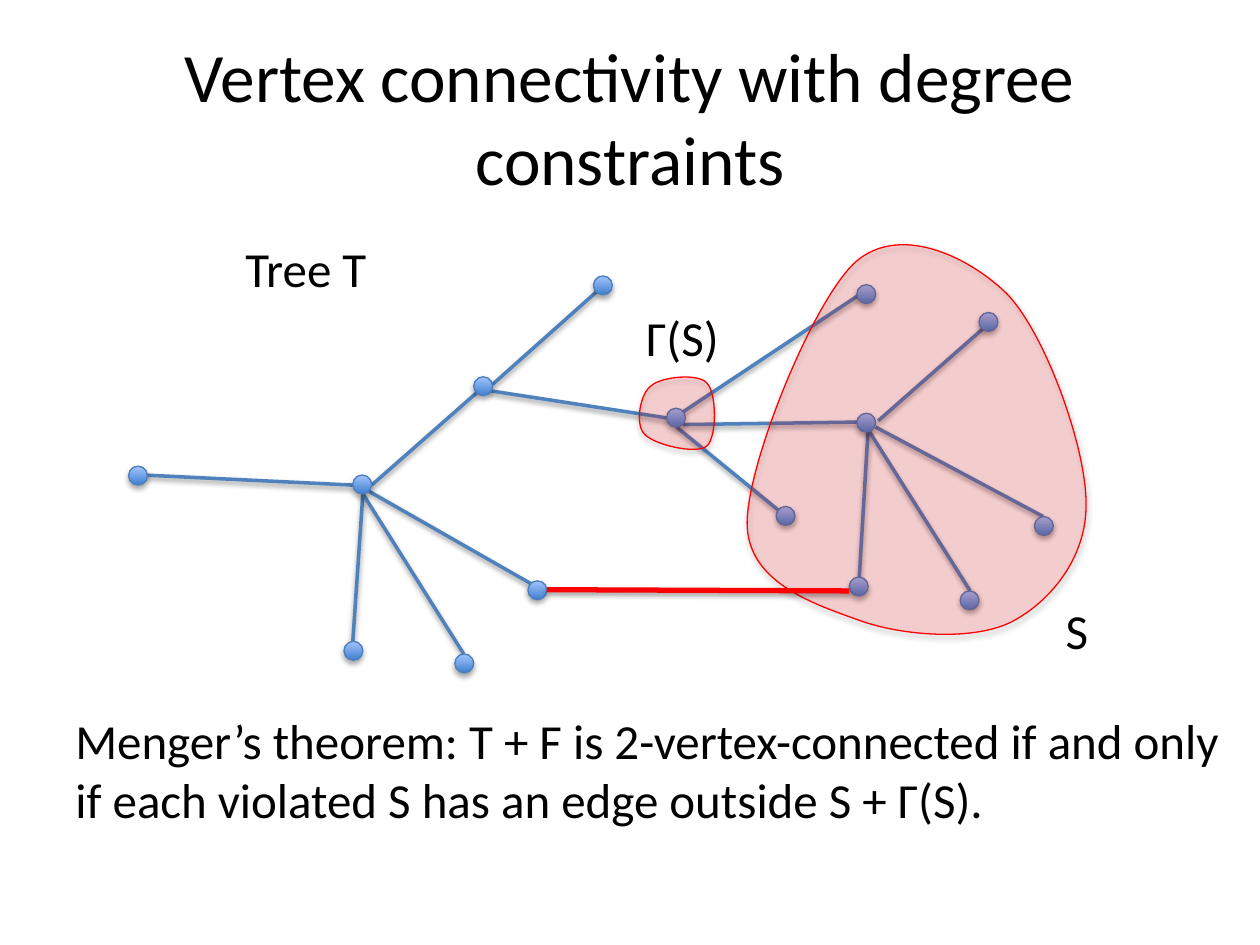
from dataclasses import dataclass

from lxml.etree import SubElement
from pptx import Presentation
from pptx.dml.color import RGBColor
from pptx.enum.shapes import MSO_CONNECTOR, MSO_SHAPE
from pptx.enum.text import MSO_ANCHOR, MSO_AUTO_SIZE, PP_ALIGN
from pptx.oxml.ns import qn
from pptx.util import Inches, Pt


@dataclass(frozen=True)
class Theme:
    font: str = "Calibri"
    title_size: float = 39.6
    body_size: float = 28
    text: RGBColor = RGBColor(0, 0, 0)
    edge: RGBColor = RGBColor(0x4F, 0x81, 0xBD)
    vertex_line: RGBColor = RGBColor(0x4B, 0x7E, 0xBC)
    vertex_dark: RGBColor = RGBColor(0x3F, 0x80, 0xCE)
    vertex_light: RGBColor = RGBColor(0xA4, 0xC4, 0xFF)
    accent: RGBColor = RGBColor(0xFF, 0, 0)


THEME = Theme()
VERTEX_SIZE = 0.15

# Left and top of each vertex
VERTICES = [
    (1.02, 3.7), (2.8, 3.77), (3.61, 5.19), (4.19, 4.61), (2.73, 5.09),
    (3.76, 2.99), (4.71, 2.19), (5.29, 3.24), (6.16, 4.02), (6.8, 2.26),
    (6.8, 3.28), (7.62, 4.69), (8.21, 4.1), (6.74, 4.58), (7.77, 2.48),
]

# Start and end of each tree edge
TREE_EDGES = [
    ((2.8, 3.85), (1.13, 3.77)), ((2.88, 3.92), (2.8, 5.09)),
    ((2.88, 3.92), (3.68, 5.19)), ((2.93, 3.9), (4.21, 4.63)),
    ((3.78, 3.12), (2.95, 3.85)), ((4.73, 2.32), (3.91, 3.05)),
    ((3.88, 3.1), (5.31, 3.32)), ((6.24, 4.1), (5.37, 3.39)),
    ((5.42, 3.27), (6.82, 2.34)), ((5.42, 3.37), (6.8, 3.35)),
    ((6.89, 3.41), (6.82, 4.58)), ((6.89, 3.41), (7.7, 4.69)),
    ((6.95, 3.39), (8.28, 4.1)), ((7.8, 2.61), (6.97, 3.34)),
]
F_EDGE = ((6.74, 4.69), (4.34, 4.68))

# Region outlines: a start point, then two controls and an end per curve
SET_S = [
    (6.79, 2.08),
    (6.45, 2.39), (5.93, 3.68), (5.93, 4.15),
    (5.93, 4.62), (6.45, 4.79), (6.81, 4.92),
    (7.16, 5.05), (7.74, 5.09), (8.04, 4.93),
    (8.34, 4.77), (8.63, 4.42), (8.62, 3.99),
    (8.62, 3.55), (8.3, 2.65), (7.99, 2.33),
    (7.67, 2.02), (7.13, 1.78), (6.79, 2.08),
]
NEIGHBOURS_OF_S = [
    (5.17, 3.06),
    (5.25, 2.99), (5.54, 2.96), (5.61, 3.04),
    (5.69, 3.12), (5.69, 3.47), (5.61, 3.54),
    (5.53, 3.61), (5.18, 3.53), (5.11, 3.44),
    (5.04, 3.36), (5.08, 3.12), (5.17, 3.06),
]


def add_shadow(part, opacity, distance):
    """Give a shape or connector a soft shadow that falls straight down."""
    effects = SubElement(part._element.spPr, qn("a:effectLst"))
    shadow = SubElement(effects, qn("a:outerShdw"), blurRad=str(Pt(3.1)),
                        dist=str(Pt(distance)), dir="5400000", rotWithShape="0")
    black = SubElement(shadow, qn("a:srgbClr"), val="000000")
    SubElement(black, qn("a:alpha"), val=str(opacity * 1000))


def add_edge(slide, ends, color, width):
    (x1, y1), (x2, y2) = ends
    edge = slide.shapes.add_connector(
        MSO_CONNECTOR.STRAIGHT, Inches(x1), Inches(y1), Inches(x2), Inches(y2))
    edge.line.color.rgb = color
    edge.line.width = Pt(width)
    add_shadow(edge, 38, 1.6)


def add_vertex(slide, left, top):
    size = Inches(VERTEX_SIZE)
    vertex = slide.shapes.add_shape(
        MSO_SHAPE.OVAL, Inches(left), Inches(top), size, size)
    vertex.fill.gradient()
    vertex.fill.gradient_angle = 90
    dark, light = vertex.fill.gradient_stops
    dark.position, light.position = 0, 1
    dark.color.rgb, light.color.rgb = THEME.vertex_dark, THEME.vertex_light
    vertex.line.color.rgb = THEME.vertex_line
    vertex.line.width = Pt(0.75)
    add_shadow(vertex, 35, 1.8)


def bend_outline(region):
    """Turn each run of three straight segments into one cubic curve."""
    segments = list(region._element.iter(qn("a:lnTo")))
    outline = segments[0].getparent()
    close = outline.find(qn("a:close"))
    for first in range(0, len(segments), 3):
        curve = SubElement(outline, qn("a:cubicBezTo"))
        for segment in segments[first:first + 3]:
            curve.append(segment[0])
            outline.remove(segment)
    outline.append(close)


def add_region(slide, outline):
    start, *controls = [(Inches(x), Inches(y)) for x, y in outline]
    builder = slide.shapes.build_freeform(*start)
    builder.add_line_segments(controls, close=True)
    region = builder.convert_to_shape()
    bend_outline(region)
    region.fill.solid()
    region.fill.fore_color.rgb = THEME.accent
    fill_color = region._element.spPr.find(qn("a:solidFill")).find(qn("a:srgbClr"))
    SubElement(fill_color, qn("a:alpha"), val="15000")
    region.line.color.rgb = THEME.accent
    region.line.width = Pt(0.75)
    add_shadow(region, 35, 1.8)


def add_text(slide, text, box, size=THEME.body_size, wrap=False,
             align=PP_ALIGN.LEFT, anchor=MSO_ANCHOR.TOP,
             auto_size=MSO_AUTO_SIZE.SHAPE_TO_FIT_TEXT):
    frame = slide.shapes.add_textbox(*map(Inches, box)).text_frame
    frame.word_wrap = wrap
    frame.auto_size = auto_size
    frame.vertical_anchor = anchor
    paragraph = frame.paragraphs[0]
    paragraph.alignment = align
    run = paragraph.add_run()
    run.text = text
    run.font.name = THEME.font
    run.font.size = Pt(size)
    run.font.color.rgb = THEME.text


def main():
    deck = Presentation()
    deck.slide_width, deck.slide_height = Inches(10), Inches(7.5)
    slide = deck.slides.add_slide(deck.slide_layouts[6])

    # Title
    add_text(slide, "Vertex connectivity with degree constraints",
             (0.5, 0.3, 9, 1.25), THEME.title_size, wrap=True,
             align=PP_ALIGN.CENTER, anchor=MSO_ANCHOR.MIDDLE,
             auto_size=MSO_AUTO_SIZE.NONE)

    # Tree T
    for ends in TREE_EDGES:
        add_edge(slide, ends, THEME.edge, 2)
    for left, top in VERTICES:
        add_vertex(slide, left, top)

    # Set S, its neighbours and the edge that leaves both
    add_region(slide, SET_S)
    add_region(slide, NEIGHBOURS_OF_S)
    add_edge(slide, F_EDGE, THEME.accent, 3)

    # Labels
    add_text(slide, "Tree T", (1.85, 1.84, 1.17, 0.57))
    add_text(slide, "Γ(S)", (5.03, 2.39, 0.78, 0.57))
    add_text(slide, "S", (8.36, 4.72, 0.38, 0.57))

    # Theorem
    add_text(slide, "Menger’s theorem: T + F is 2-vertex-connected if and only "
             "if each violated S has an edge outside S + Γ(S).",
             (0.5, 5.59, 9.32, 1.04), wrap=True)

    deck.save("out.pptx")


if __name__ == "__main__":
    main()
